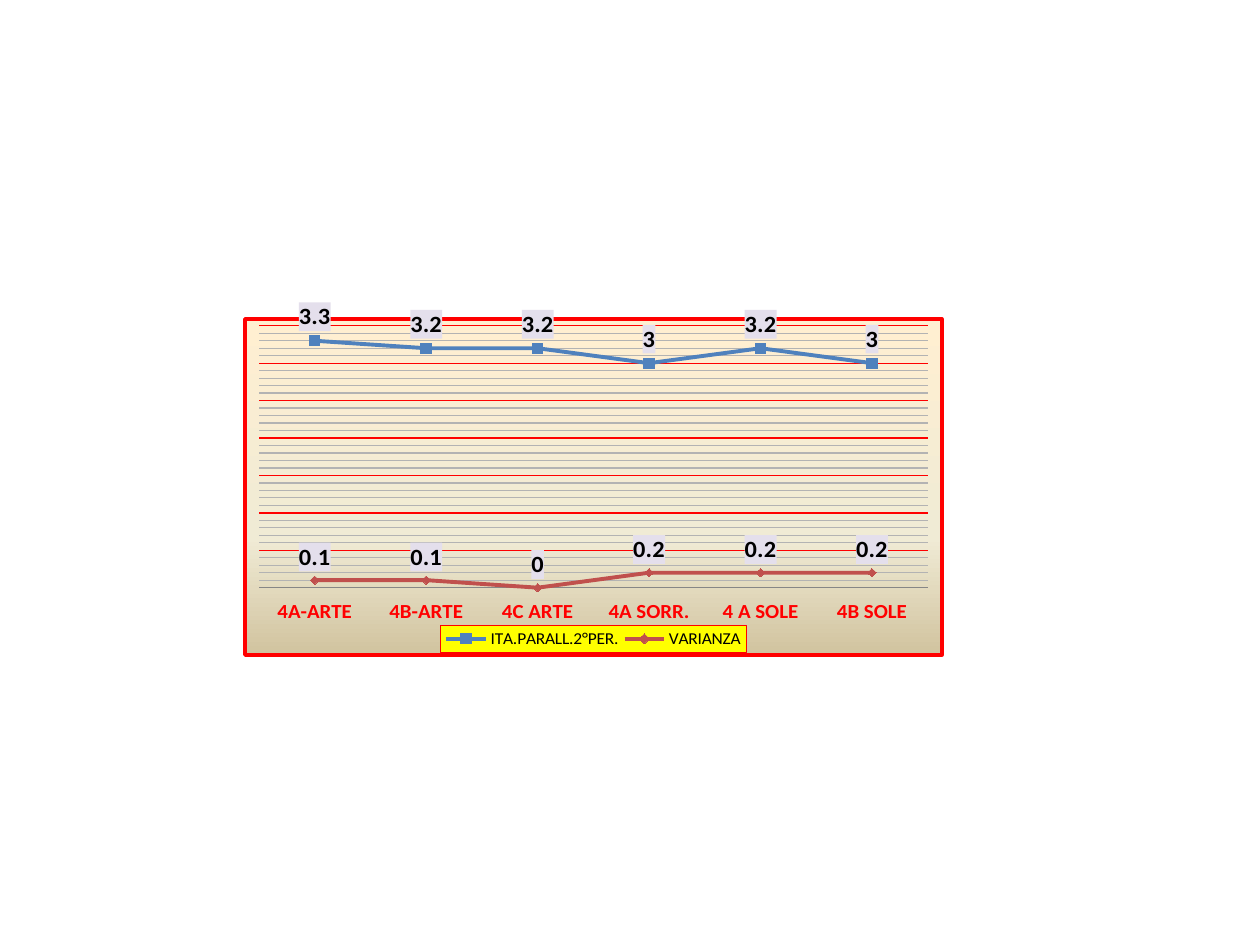
from lxml.etree import SubElement
from pptx import Presentation
from pptx.chart.data import CategoryChartData
from pptx.dml.color import RGBColor
from pptx.enum.chart import XL_CHART_TYPE as ChartType
from pptx.enum.chart import XL_LABEL_POSITION as LabelPos
from pptx.enum.chart import XL_LEGEND_POSITION as LegendPos
from pptx.enum.chart import XL_MARKER_STYLE as Marker
from pptx.enum.chart import XL_TICK_LABEL_POSITION as TickLabelPos
from pptx.enum.chart import XL_TICK_MARK as TickMark
from pptx.oxml import parse_xml
from pptx.oxml.ns import nsdecls, qn
from pptx.util import Inches, Pt

COLORS = {
    "mean": "4F81BD", "variance": "C0504D", "accent": "FF0000",
    "minor_grid": "B3B3B3", "axis": "868686", "text": "000000",
    "label_fill": "E4DFEC", "legend_fill": "FFFF00",
}
BACKDROP = ((0, "FFEFD1"), (65, "F0EBD5"), (100, "D1C39F"))
CLASSES = ("4A-ARTE", "4B-ARTE", "4C ARTE", "4A SORR.", "4 A SOLE", "4B SOLE")
RESULTS = (
    ("ITA.PARALL.2°PER.", (3.3, 3.2, 3.2, 3, 3.2, 3), "mean", Marker.SQUARE, 6),
    ("VARIANZA", (0.1, 0.1, 0, 0.2, 0.2, 0.2), "variance", Marker.DIAMOND, 5),
)


def rgb(name):
    return RGBColor.from_string(COLORS[name])


def style_font(font, size, color="text", bold=False):
    for key, value in {"name": "Calibri", "size": Pt(size), "bold": bold}.items():
        setattr(font, key, value)
    font.color.rgb = rgb(color)


def style_line(line, color, width):
    line.color.rgb = rgb(color)
    line.width = Pt(width)


def solid(color):
    return f'<a:solidFill><a:srgbClr val="{COLORS[color]}"/></a:solidFill>'


def shape_properties(fill="", border=None, width=0):
    """Return a c:spPr element for chart parts that lack a public format."""
    line = f'<a:ln w="{Pt(width)}">{solid(border)}</a:ln>' if border else ""
    return parse_xml(f'<c:spPr {nsdecls("c", "a")}>{fill}{line}</c:spPr>')


def manual_layout(parent, after, x, y, w, h, inner=False):
    """Place a chart part by shares of the chart's size."""
    for old in parent.findall(qn("c:layout")):
        parent.remove(old)
    layout = parse_xml(f'<c:layout {nsdecls("c")}><c:manualLayout/></c:layout>')
    settings = {"layoutTarget": "inner"} if inner else {}
    settings |= {"xMode": "edge", "yMode": "edge", "x": x, "y": y, "w": w, "h": h}
    for tag, value in settings.items():
        SubElement(layout[0], qn(f"c:{tag}")).set("val", str(value))
    if after is None:
        parent.insert(0, layout)
    else:
        after.addnext(layout)


def format_backdrop(chart):
    stops = "".join(f'<a:gs pos="{share * 1000}"><a:srgbClr val="{color}"/></a:gs>'
                    for share, color in BACKDROP)
    gradient = (f'<a:gradFill><a:gsLst>{stops}</a:gsLst>'
                '<a:lin ang="5400000" scaled="0"/></a:gradFill>')
    chart_part = chart.element.find(qn("c:chart"))
    chart_part.addnext(shape_properties(gradient, "accent", 2.25))
    manual_layout(chart_part.find(qn("c:plotArea")), None,
                  0.02, 0.02, 0.96, 0.78, inner=True)


def format_axes(chart):
    scale, classes = chart.value_axis, chart.category_axis
    for key, value in {"minimum_scale": 0, "maximum_scale": 3.5, "major_unit": 0.5,
                       "minor_unit": 0.1, "has_major_gridlines": True,
                       "has_minor_gridlines": True, "visible": False}.items():
        setattr(scale, key, value)
    style_line(scale.major_gridlines.format.line, "accent", 0.75)
    minor_gridlines = scale._element.find(qn("c:minorGridlines"))
    minor_gridlines.append(shape_properties(border="minor_grid", width=0.75))
    classes.major_tick_mark = TickMark.NONE
    classes.tick_label_position = TickLabelPos.LOW
    style_line(classes.format.line, "axis", 0.75)
    style_font(classes.tick_labels.font, 12, "accent", True)


def format_series(series, color, marker, marker_size):
    series.smooth = False
    style_line(series.format.line, color, 2.25)
    series.marker.style, series.marker.size = marker, marker_size
    series.marker.format.fill.solid()
    series.marker.format.fill.fore_color.rgb = rgb(color)
    style_line(series.marker.format.line, color, 0.75)
    labels = series.data_labels
    labels.show_value, labels.position = True, LabelPos.ABOVE
    style_font(labels.font, 14, bold=True)
    label_text = labels._element.find(qn("c:txPr"))
    label_text.addprevious(shape_properties(solid("label_fill")))


def format_legend(chart):
    chart.has_legend = True
    legend = chart.legend
    legend.position, legend.include_in_layout = LegendPos.BOTTOM, False
    style_font(legend.font, 10)
    element = legend._element
    manual_layout(element, element.find(qn("c:legendPos")), 0.28, 0.92, 0.44, 0.08)
    element.find(qn("c:txPr")).addprevious(
        shape_properties(solid("legend_fill"), "accent", 0.75))


def add_results_chart(slide, left, top, width, height):
    data = CategoryChartData()
    data.categories = CLASSES
    for name, values, *_ in RESULTS:
        data.add_series(name, values)
    chart = slide.shapes.add_chart(
        ChartType.LINE_MARKERS, left, top, width, height, data).chart
    chart.has_title = False
    style_font(chart.font, 10)
    chart.plots[0].vary_by_categories = False
    format_backdrop(chart)
    format_axes(chart)
    for series, (_, _, *look) in zip(chart.plots[0].series, RESULTS):
        format_series(series, *look)
    format_legend(chart)


def main():
    deck = Presentation()
    deck.slide_width, deck.slide_height = Inches(10), Inches(7.5)
    slide = deck.slides.add_slide(deck.slide_layouts[6])
    width, height = deck.slide_width, deck.slide_height
    add_results_chart(slide, int(width * 0.193), int(height * 0.32),
                      int(width * 0.556), int(height * 0.375))
    deck.save("out.pptx")


if __name__ == "__main__":
    main()
